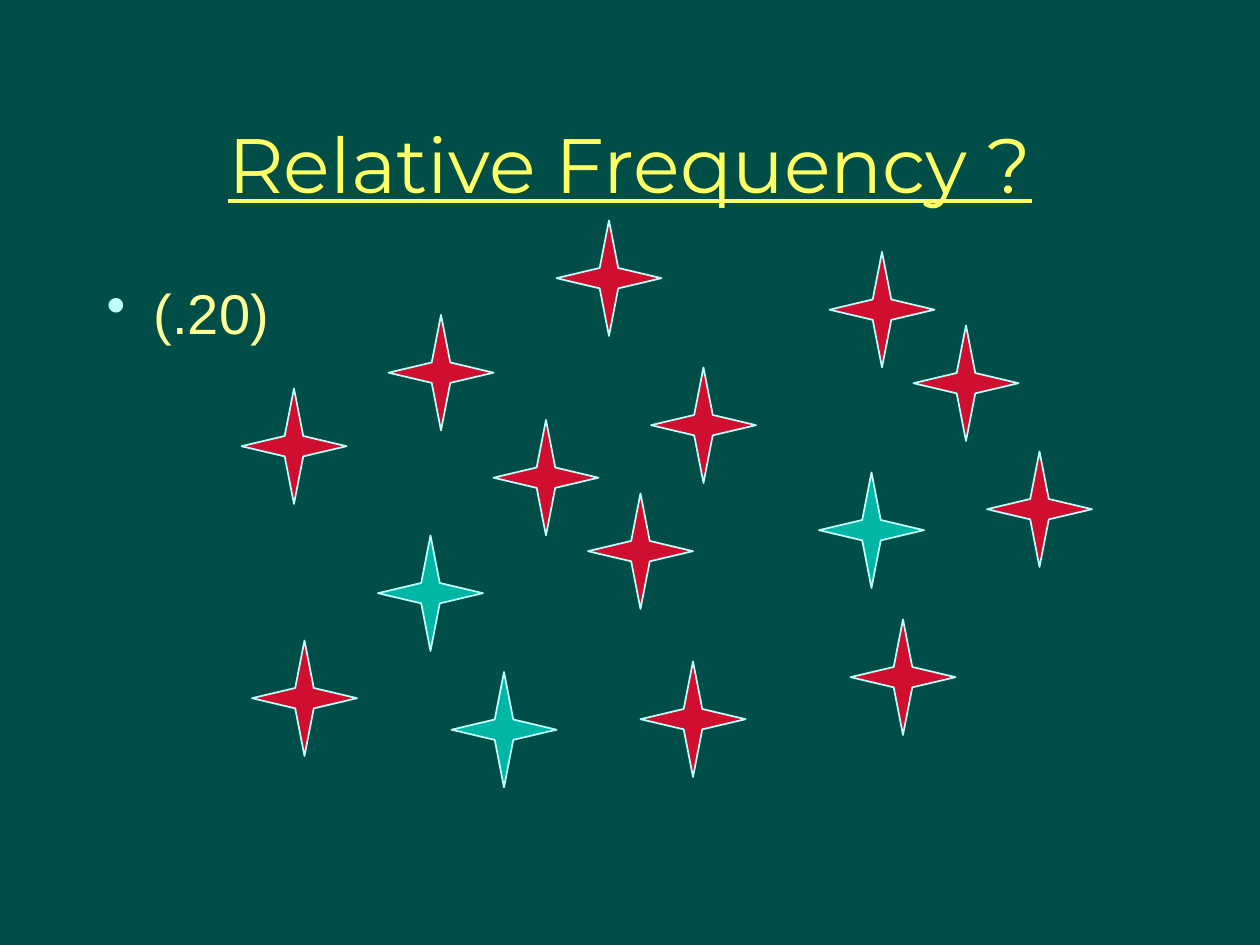
from lxml import etree
from pptx import Presentation
from pptx.dml.color import RGBColor
from pptx.enum.shapes import MSO_SHAPE
from pptx.enum.text import MSO_ANCHOR, MSO_AUTO_SIZE, PP_ALIGN
from pptx.oxml.ns import qn
from pptx.util import Cm, Pt

STAR = MSO_SHAPE.STAR_4_POINT
MIDDLE = MSO_ANCHOR.MIDDLE
NO_FIT = MSO_AUTO_SIZE.NONE
CENTER = PP_ALIGN.CENTER
TITLE_ONLY = 5
GRID = 2.54 / 12

RED_STARS = [(23, 37), (47, 40), (24, 61), (61, 63), (94, 43), (56, 47),
             (81, 59), (62, 35), (37, 30), (53, 21), (79, 24), (87, 31)]
TEAL_STARS = [(43, 64), (36, 51), (78, 45)]


def color(value):
    return RGBColor.from_string(value)


class StarPage:
    """Holds the deck's style and the current slide, and draws its elements."""

    background = "004E47"
    title_color = "FFFF66"
    text_color = "FFFF99"
    accent = "C0FEF9"
    red = "CF0E30"
    teal = "00B7A5"

    def __init__(self, deck):
        self.page = deck.slides.add_slide(deck.slide_layouts[TITLE_ONLY])
        fill = self.page.background.fill
        fill.solid()
        fill.fore_color.rgb = color(self.background)

    def style(self, para, font_name, size, value):
        para.font.name = font_name
        para.font.size = Pt(size)
        para.font.color.rgb = color(value)

    def title(self, text):
        box = self.page.shapes.title
        box.left, box.top, box.width, box.height = Cm(1.9), Cm(1.69), Cm(21.6), Cm(3.18)
        frame = box.text_frame
        frame.text = text
        frame.auto_size = NO_FIT
        frame.vertical_anchor = MIDDLE
        para = frame.paragraphs[0]
        para.alignment = CENTER
        self.style(para, "Montserrat", 44, self.title_color)
        para.font.underline = True

    def bullet(self, text):
        box = self.page.shapes.add_textbox(Cm(1.9), Cm(5.5), Cm(21.6), Cm(11.43))
        frame = box.text_frame
        frame.word_wrap = True
        para = frame.paragraphs[0]
        para.text = text
        properties = para._p.get_or_add_pPr()
        properties.set("marL", str(Cm(0.95)))
        properties.set("indent", str(-Cm(0.95)))
        bullet_color = etree.SubElement(properties, qn("a:buClr"))
        etree.SubElement(bullet_color, qn("a:srgbClr"), val=self.accent)
        etree.SubElement(properties, qn("a:buChar"), char="•")
        self.style(para, "Arial", 32, self.text_color)

    def star(self, column, row, value):
        star = self.page.shapes.add_shape(
            STAR, Cm(column * GRID), Cm(row * GRID), Cm(10 * GRID), Cm(11 * GRID))
        star.adjustments[0] = 0.125
        star.shadow.inherit = False
        star.fill.solid()
        star.fill.fore_color.rgb = color(value)
        star.line.color.rgb = color(self.accent)
        star.line.width = Pt(1)


def main():
    deck = Presentation()
    deck.slide_width, deck.slide_height = Cm(25.4), Cm(19.05)
    page = StarPage(deck)
    page.title("Relative Frequency ?")
    page.bullet("(.20)")
    for value, places in ((page.red, RED_STARS), (page.teal, TEAL_STARS)):
        for column, row in places:
            page.star(column, row, value)
    deck.save("out.pptx")


if __name__ == "__main__":
    main()
